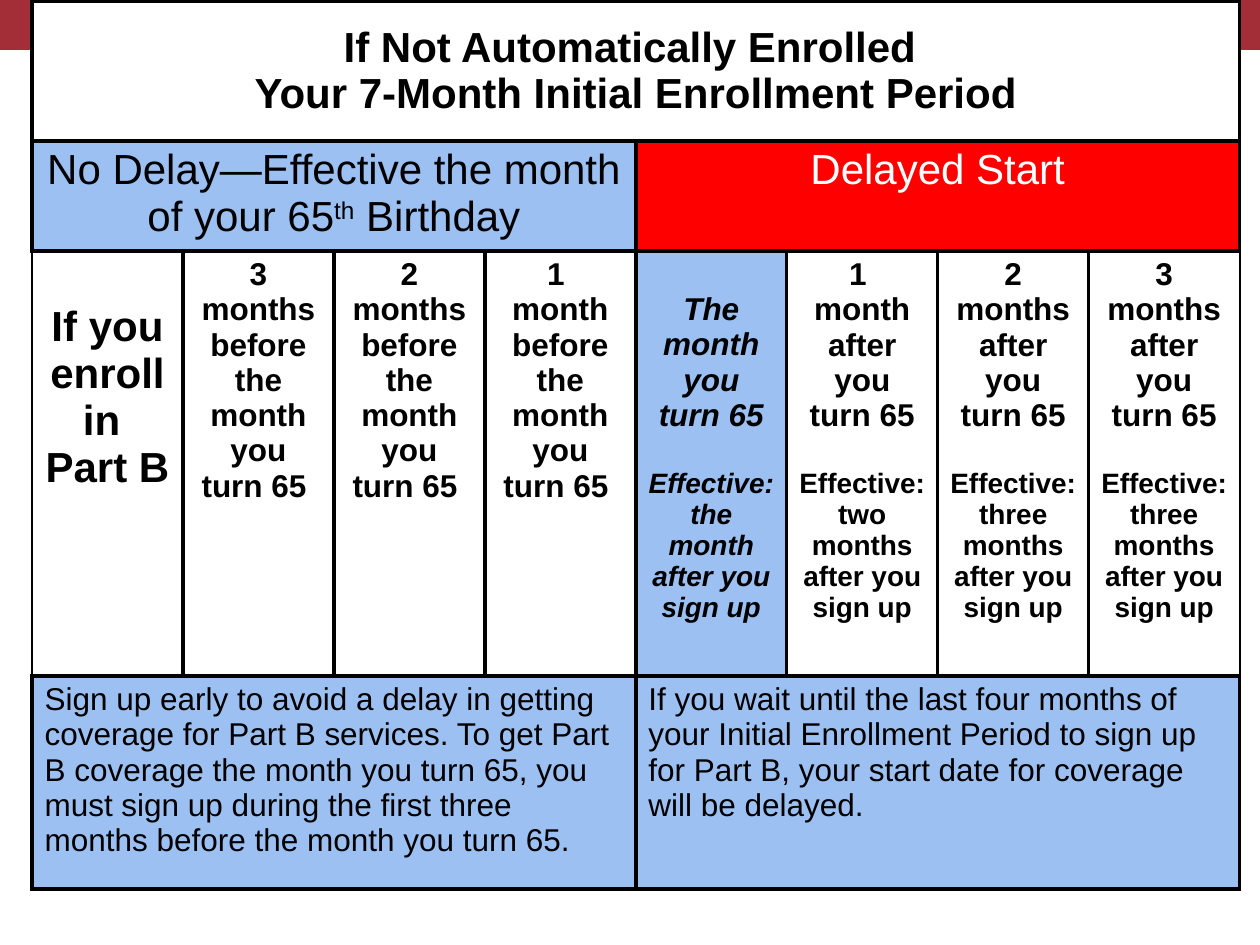
import pptx
import pptx.util
import pptx.dml.color
import pptx.enum.shapes
import pptx.enum.text
import pptx.oxml
import pptx.oxml.ns

PX = 914400 / 126
COLORS = {"black": "000000", "white": "FFFFFF", "maroon": "A32E37",
          "blue": "9BC0F1", "red": "FF0000"}
FONT = "Arial"
SLIDE_SIZE = (1260, 945)
BAND_HEIGHT = 50
TABLE_LEFT, TABLE_TOP = 32, 1
COLUMN_WIDTH, COLUMN_COUNT = 151, 8
ROW_HEIGHTS = [140, 110, 425, 213]
MONTHS_ROW = 2
BORDER_WIDTH = 2.25
CELL_MARGIN = 6
LINE_RATIO = 1.117  # height of an Arial line relative to its size

TITLE = ["If Not Automatically Enrolled ", "Your 7-Month Initial Enrollment Period"]
NO_DELAY = ["No Delay—Effective the month of your 65", "th", " Birthday"]
DELAYED = "Delayed Start"
ENROLL = ["If you enroll in ", "Part B "]
BEFORE = [
    ["3 months before the month you turn 65 "],
    ["2 months before the month you turn 65 "],
    ["1 ", "month before the month you turn 65 "],
]
AFTER = [
    (["The month you turn 65"], "Effective: the month after you sign up"),
    (["1 ", "month after you turn 65"], "Effective: two months after you sign up"),
    (["2 months after you turn 65"], "Effective: three months after you sign up"),
    (["3 months after you turn 65"], "Effective: three months after you sign up"),
]
EARLY_ADVICE = ("Sign up early to avoid a delay in getting coverage for Part B services. "
                "To get Part B coverage the month you turn 65, you must sign up during "
                "the first three months before the month you turn 65.")
LATE_ADVICE = ("If you wait until the last four months of your Initial Enrollment Period "
               "to sign up for Part B, your start date for coverage will be delayed.")


def px(length):
    return round(length * PX)


def rgb(name):
    return pptx.dml.color.RGBColor.from_string(COLORS[name])


def set_borders(cell, hidden_sides):
    properties = cell._tc.get_or_add_tcPr()
    for side in "LRTB":
        paint = "<a:noFill/>" if side in hidden_sides else (
            f'<a:solidFill><a:srgbClr val="{COLORS["black"]}"/></a:solidFill>')
        properties.append(pptx.oxml.parse_xml(
            f'<a:ln{side} {pptx.oxml.ns.nsdecls("a")} '
            f'w="{pptx.util.Pt(BORDER_WIDTH)}">{paint}</a:ln{side}>'))


def style_paragraph(paragraph, size, color="black", bold=False, italic=False, centered=True):
    align = pptx.enum.text.PP_ALIGN
    paragraph.alignment = align.CENTER if centered else align.LEFT
    for run in paragraph.runs:
        run.font.name = FONT
        run.font.size = pptx.util.Pt(size)
        run.font.bold = bold
        run.font.italic = italic
        run.font.color.rgb = rgb(color)


def fill_cell(cell, lines, size, **style):
    """Write one paragraph per line, all in the same style."""
    cell.text_frame.text = "\n".join(lines)
    for paragraph in cell.text_frame.paragraphs:
        style_paragraph(paragraph, size, **style)


def skip_line(cell, size):
    cell.margin_top = px(CELL_MARGIN) + pptx.util.Pt(size * LINE_RATIO)


presentation = pptx.Presentation()
presentation.slide_width, presentation.slide_height = map(px, SLIDE_SIZE)
slide = presentation.slides.add_slide(presentation.slide_layouts[6])

band = slide.shapes.add_shape(pptx.enum.shapes.MSO_SHAPE.RECTANGLE,
                              0, 0, px(SLIDE_SIZE[0]), px(BAND_HEIGHT))
band.shadow.inherit = False
band.fill.solid()
band.fill.fore_color.rgb = rgb("maroon")
band.line.fill.background()

table_width = COLUMN_WIDTH * COLUMN_COUNT
table = slide.shapes.add_table(len(ROW_HEIGHTS), COLUMN_COUNT, px(TABLE_LEFT), px(TABLE_TOP),
                               px(table_width), px(sum(ROW_HEIGHTS))).table
for column in table.columns:
    column.width = px(COLUMN_WIDTH)
for row, height in zip(table.rows, ROW_HEIGHTS):
    row.height = px(height)

half = COLUMN_COUNT // 2
row_fills = [
    ["white"] * COLUMN_COUNT,
    ["blue"] * half + ["red"] * half,
    ["white"] * half + ["blue"] + ["white"] * (half - 1),
    ["blue"] * COLUMN_COUNT,
]
for row_index, fills in enumerate(row_fills):
    for column_index, fill in enumerate(fills):
        cell = table.cell(row_index, column_index)
        outer_side = {0: "L", COLUMN_COUNT - 1: "R"}.get(column_index, "")
        set_borders(cell, outer_side if row_index == MONTHS_ROW else "")
        cell.fill.solid()
        cell.fill.fore_color.rgb = rgb(fill)
        cell.margin_top = cell.margin_bottom = px(CELL_MARGIN)

table.cell(0, 0).merge(table.cell(0, COLUMN_COUNT - 1))
for row_index in (1, 3):
    for start in (0, half):
        table.cell(row_index, start).merge(table.cell(row_index, start + half - 1))

title_cell = table.cell(0, 0)
title_cell.vertical_anchor = pptx.enum.text.MSO_ANCHOR.MIDDLE
fill_cell(title_cell, TITLE, 24, bold=True)

no_delay = table.cell(1, 0).text_frame.paragraphs[0]
for text in NO_DELAY:
    no_delay.add_run().text = text
style_paragraph(no_delay, 24)
no_delay.runs[1]._r.get_or_add_rPr().set("baseline", "30000")
fill_cell(table.cell(1, half), [DELAYED], 24, color="white")

enroll_cell = table.cell(MONTHS_ROW, 0)
fill_cell(enroll_cell, ENROLL, 24, bold=True)
skip_line(enroll_cell, 24)
for column_index, lines in enumerate(BEFORE, start=1):
    fill_cell(table.cell(MONTHS_ROW, column_index), lines, 18, bold=True)
for column_index, (lines, effective) in enumerate(AFTER, start=half):
    cell = table.cell(MONTHS_ROW, column_index)
    birthday_month = column_index == half
    fill_cell(cell, lines, 18, bold=True, italic=birthday_month)
    if birthday_month:
        skip_line(cell, 18)
    paragraph = cell.text_frame.add_paragraph()
    paragraph.text = effective
    paragraph.space_before = pptx.util.Pt(20)
    style_paragraph(paragraph, 16, bold=True, italic=birthday_month)

fill_cell(table.cell(3, 0), [EARLY_ADVICE], 18, centered=False)
fill_cell(table.cell(3, half), [LATE_ADVICE], 18, centered=False)

edge_top = TABLE_TOP + sum(ROW_HEIGHTS[:MONTHS_ROW])
edge_bottom = edge_top + ROW_HEIGHTS[MONTHS_ROW]
for x in (TABLE_LEFT, TABLE_LEFT + table_width):
    edge = slide.shapes.add_connector(pptx.enum.shapes.MSO_CONNECTOR.STRAIGHT,
                                      px(x), px(edge_top), px(x), px(edge_bottom))
    edge.line.color.rgb = rgb("black")
    edge.line.width = pptx.util.Pt(0.75)
    edge._element.spPr.append(pptx.oxml.parse_xml(
        f'<a:effectLst {pptx.oxml.ns.nsdecls("a")}/>'))

presentation.save("out.pptx")
